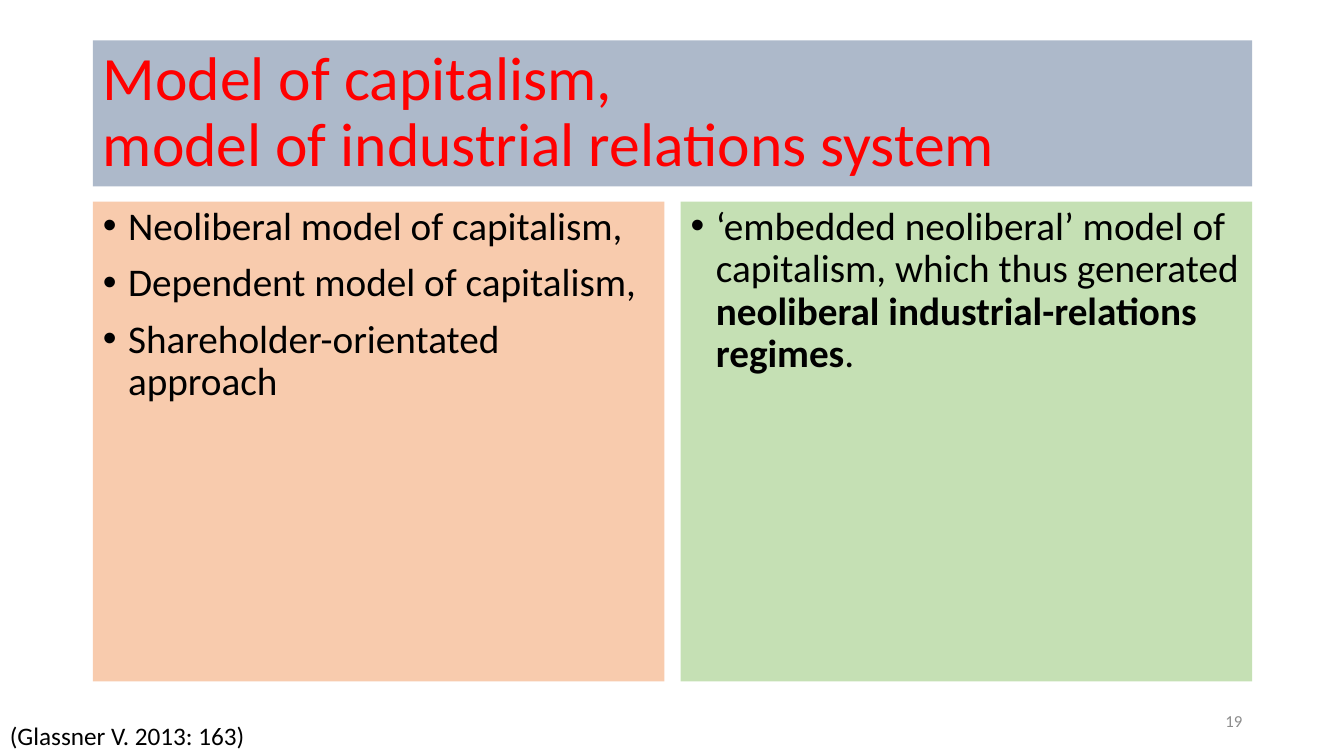
import pptx
import pptx.dml.color
import pptx.enum.text
import pptx.util

COLORS = {
    "title_fill": "ADB9CA",
    "title_text": "FF0000",
    "left_fill": "F8CBAD",
    "right_fill": "C5E0B4",
    "text": "000000",
    "page_number": "8C8C8C",
}
FONT = "Calibri"
SLIDE_WIDTH, SLIDE_HEIGHT = 13.33, 7.5
MARGIN = 0.92
CONTENT_WIDTH = 11.5
GUTTER = 0.16
COLUMN_WIDTH = (CONTENT_WIDTH - GUTTER) / 2
COLUMN_TOP, COLUMN_HEIGHT = 2, 4.76
INDENT = pptx.util.Inches(0.25)

# Each column is a list of paragraphs; each paragraph is a list of (text, bold).
CAPITALISM_MODELS = [
    [("Neoliberal model of capitalism,", False)],
    [("Dependent model of capitalism,", False)],
    [("Shareholder-orientated approach", False)],
]
INDUSTRIAL_RELATIONS = [
    [
        ("‘embedded neoliberal’ model of capitalism, which thus generated ", False),
        ("neoliberal industrial-relations regimes", True),
        (".", False),
    ],
]


def rgb(color):
    return pptx.dml.color.RGBColor.from_string(COLORS[color])


def place(shape, left, top, width, height):
    shape.left, shape.top, shape.width, shape.height = (
        pptx.util.Inches(length) for length in (left, top, width, height)
    )


def fill_panel(shape, color):
    shape.fill.solid()
    shape.fill.fore_color.rgb = rgb(color)
    shape.text_frame.auto_size = pptx.enum.text.MSO_AUTO_SIZE.NONE


def format_runs(paragraph, size, color):
    for run in paragraph.runs:
        run.font.name = FONT
        run.font.size = pptx.util.Pt(size)
        run.font.color.rgb = rgb(color)


def set_title(title):
    place(title, MARGIN, 0.4, CONTENT_WIDTH, 1.45)
    fill_panel(title, "title_fill")
    title.text_frame.text = "Model of capitalism, \vmodel of industrial relations system"
    title.text_frame.vertical_anchor = pptx.enum.text.MSO_ANCHOR.MIDDLE
    paragraph = title.text_frame.paragraphs[0]
    paragraph.alignment = pptx.enum.text.PP_ALIGN.LEFT
    paragraph.line_spacing = 0.9
    format_runs(paragraph, 44, "title_text")


def set_column(body, index, color, items):
    left = MARGIN + index * (COLUMN_WIDTH + GUTTER)
    place(body, left, COLUMN_TOP, COLUMN_WIDTH, COLUMN_HEIGHT)
    fill_panel(body, color)
    text_frame = body.text_frame
    for number, item in enumerate(items):
        paragraph = text_frame.add_paragraph() if number else text_frame.paragraphs[0]
        paragraph.line_spacing = 0.9
        paragraph.space_before = pptx.util.Pt(10)
        properties = paragraph._p.get_or_add_pPr()
        properties.set("marL", str(INDENT))
        properties.set("indent", str(-INDENT))
        for text, bold in item:
            run = paragraph.add_run()
            run.text = text
            run.font.bold = bold
        format_runs(paragraph, 28, "text")


def add_label(slide, text, box, size, color, alignment, anchor, wrap):
    label = slide.shapes.add_textbox(0, 0, 0, 0)
    place(label, *box)
    label.text_frame.word_wrap = wrap
    label.text_frame.vertical_anchor = anchor
    label.text_frame.text = text
    paragraph = label.text_frame.paragraphs[0]
    paragraph.alignment = alignment
    format_runs(paragraph, size, color)


def main():
    presentation = pptx.Presentation()
    presentation.slide_width = pptx.util.Inches(SLIDE_WIDTH)
    presentation.slide_height = pptx.util.Inches(SLIDE_HEIGHT)
    two_content_layout = presentation.slide_layouts[3]
    slide = presentation.slides.add_slide(two_content_layout)

    set_title(slide.shapes.title)
    set_column(slide.placeholders[1], 0, "left_fill", CAPITALISM_MODELS)
    set_column(slide.placeholders[2], 1, "right_fill", INDUSTRIAL_RELATIONS)

    align, anchor = pptx.enum.text.PP_ALIGN, pptx.enum.text.MSO_ANCHOR
    add_label(slide, "(Glassner V. 2013: 163)", (0, SLIDE_HEIGHT - 0.4, 2.56, 0.4),
              18, "text", align.LEFT, anchor.TOP, False)
    add_label(slide, "19", (MARGIN + CONTENT_WIDTH - 3, 6.95, 3, 0.4),
              12, "page_number", align.RIGHT, anchor.MIDDLE, True)
    presentation.save("out.pptx")


if __name__ == "__main__":
    main()
